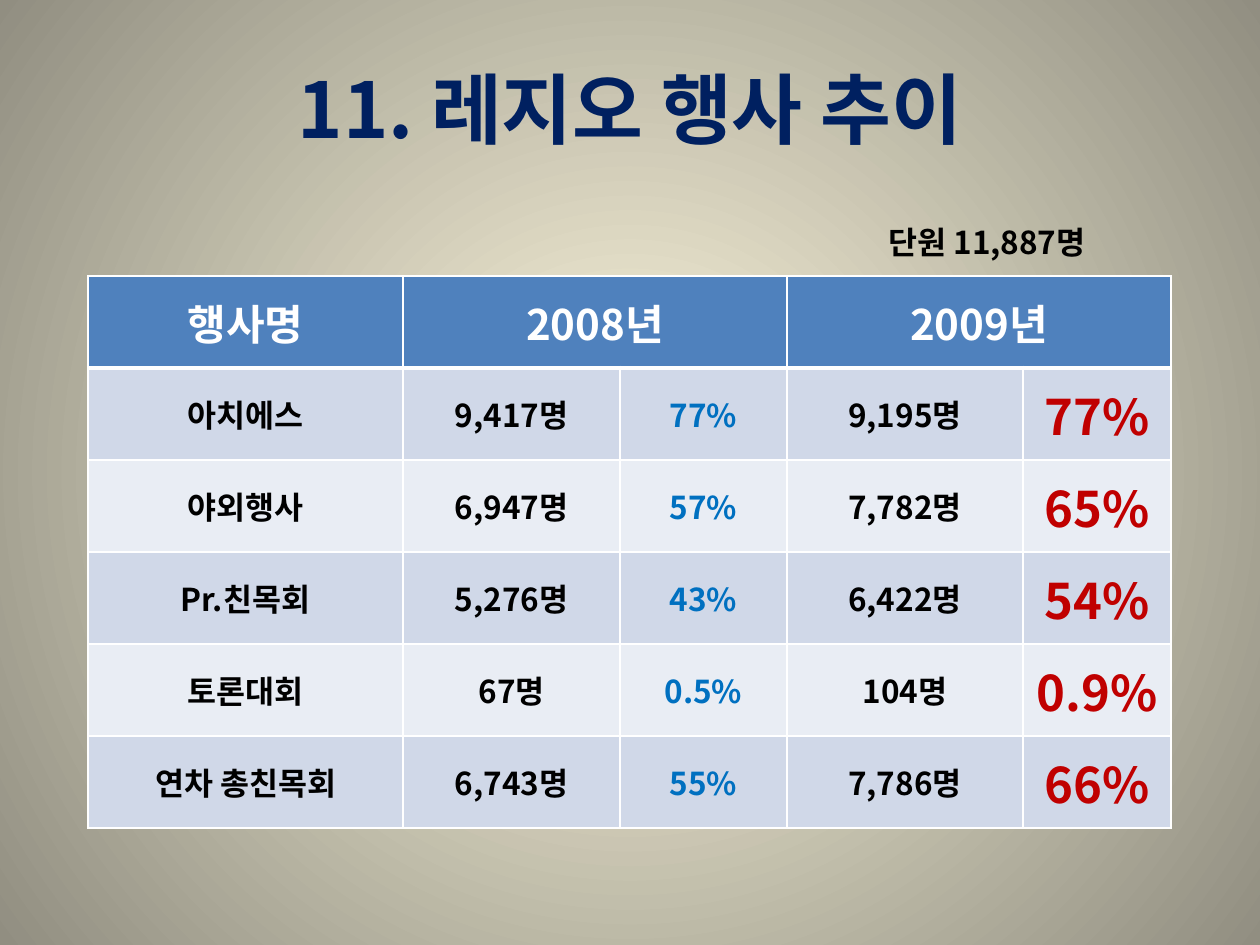
from lxml import etree
from pptx import Presentation
from pptx import util as u
from pptx.dml.color import RGBColor
from pptx.enum import text
from pptx.oxml import parse_xml
from pptx.oxml.ns import nsdecls, qn

PX_PER_INCH = 126
FONT = "Noto Sans CJK KR"
COLORS = {
    "glow": "FCF7DD", "edge": "918E81", "title": "002060",
    "header": "4F81BD", "odd": "D0D8E8", "even": "E9EDF4",
    "white": "FFFFFF", "black": "000000", "blue": "0070C0", "red": "C00000",
}
COLUMN_WIDTHS = [315, 217, 167, 236, 148]
ROW_HEIGHT = 92
COLUMN_STYLES = [(18, "black"), (18, "black"), (18, "blue"), (18, "black"), (28, "red")]
HEADER = ["행사명", "2008년", "", "2009년", ""]
EVENTS = [
    ["아치에스", "9,417명", "77%", "9,195명", "77%"],
    ["야외행사", "6,947명", "57%", "7,782명", "65%"],
    ["Pr.친목회", "5,276명", "43%", "6,422명", "54%"],
    ["토론대회", "67명", "0.5%", "104명", "0.9%"],
    ["연차 총친목회", "6,743명", "55%", "7,786명", "66%"],
]


def px(length):
    return u.Inches(length / PX_PER_INCH)


def rgb(name):
    return RGBColor.from_string(COLORS[name])


def write(frame, words, size, color, align=text.PP_ALIGN.CENTER):
    paragraph = frame.paragraphs[0]
    paragraph.text = words
    paragraph.alignment = align
    font = paragraph.font
    font.size, font.bold, font.name = u.Pt(size), True, FONT
    font.color.rgb = rgb(color)
    # East Asian face follows the Latin one
    properties = paragraph._p.pPr.find(qn("a:defRPr"))
    east_asian = parse_xml(f'<a:ea {nsdecls("a")} typeface="{FONT}"/>')
    properties.find(qn("a:latin")).addnext(east_asian)


def paint_background(slide):
    fill = slide.background.fill
    fill.gradient()
    for stop, color in zip(fill.gradient_stops, ("glow", "edge")):
        stop.color.rgb = rgb(color)
    # Turn the linear gradient into a circular one
    gradient = slide.element.find(".//" + qn("a:gradFill"))
    for linear in gradient.findall(qn("a:lin")):
        gradient.remove(linear)
    circle = etree.SubElement(gradient, qn("a:path"), path="circle")
    etree.SubElement(circle, qn("a:fillToRect"), l="50000", t="50000", r="50000", b="50000")


def add_title(slide, left, top, width, height):
    title = slide.shapes.title
    title.left, title.top = px(left), px(top)
    title.width, title.height = px(width), px(height)
    title.text_frame.vertical_anchor = text.MSO_ANCHOR.MIDDLE
    write(title.text_frame, "11. 레지오 행사 추이", 44, "title")


def add_member_count(slide, left, top, width, height):
    members = slide.shapes.add_textbox(px(left), px(top), px(width), px(height))
    members.text_frame.word_wrap = True
    members.text_frame.auto_size = text.MSO_AUTO_SIZE.SHAPE_TO_FIT_TEXT
    write(members.text_frame, "단원 11,887명", 18, "black", text.PP_ALIGN.LEFT)


def set_borders(cell, **widths):
    properties = cell._tc.get_or_add_tcPr()
    for index, side in enumerate("LRTB"):
        properties.insert(index, parse_xml(
            f'<a:ln{side} {nsdecls("a")} w="{u.Pt(widths.get(side, 1))}"><a:solidFill>'
            f'<a:srgbClr val="{COLORS["white"]}"/></a:solidFill></a:ln{side}>'))


def style_cell(cell, fill, **border_widths):
    cell.vertical_anchor = text.MSO_ANCHOR.MIDDLE
    cell.fill.solid()
    cell.fill.fore_color.rgb = rgb(fill)
    set_borders(cell, **border_widths)


def add_event_table(slide, left, top):
    rows = [HEADER] + EVENTS
    table = slide.shapes.add_table(
        len(rows), len(COLUMN_WIDTHS), px(left), px(top),
        px(sum(COLUMN_WIDTHS)), px(ROW_HEIGHT * len(rows))).table
    for column, width in zip(table.columns, COLUMN_WIDTHS):
        column.width = px(width)
    for row in table.rows:
        row.height = px(ROW_HEIGHT)

    # Header: each year spans its count and its share
    for year in (1, 3):
        table.cell(0, year).merge(table.cell(0, year + 1))
    for c, words in enumerate(HEADER):
        style_cell(table.cell(0, c), "header", B=3)
        if words:
            write(table.cell(0, c).text_frame, words, 24, "white")

    # Events in alternating bands
    for r, event in enumerate(EVENTS, start=1):
        for c, (words, (size, color)) in enumerate(zip(event, COLUMN_STYLES)):
            cell = table.cell(r, c)
            style_cell(cell, "odd" if r % 2 else "even", T=3 if r == 1 else 1)
            write(cell.text_frame, words, size, color)


def main():
    deck = Presentation()
    deck.slide_width, deck.slide_height = px(1260), px(945)
    slide = deck.slides.add_slide(deck.slide_layouts[5])
    paint_background(slide)
    add_title(slide, 63, 38, 1134, 140)
    add_event_table(slide, 88, 276)
    add_member_count(slide, 876, 217, 266, 50)
    deck.save("out.pptx")


if __name__ == "__main__":
    main()
